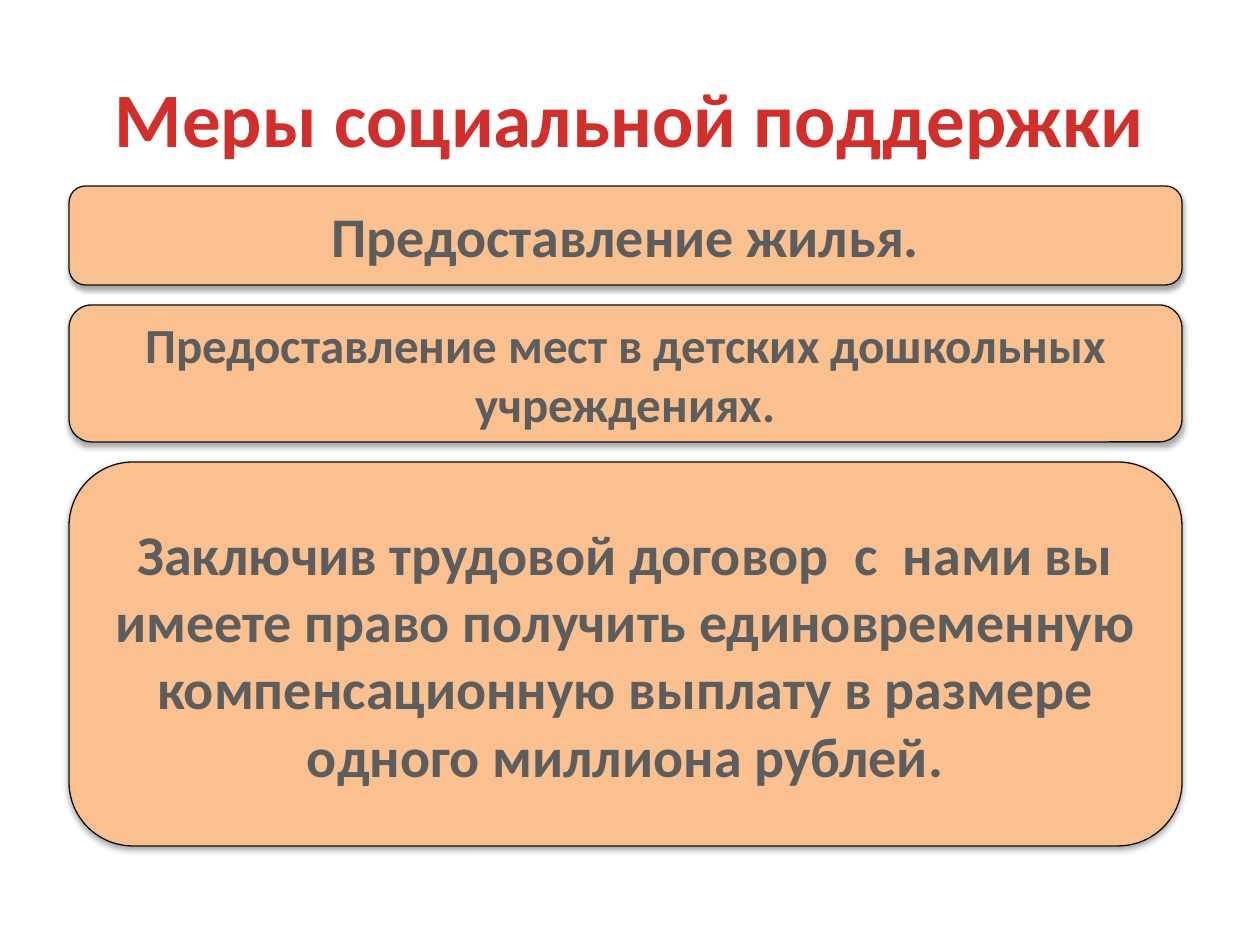
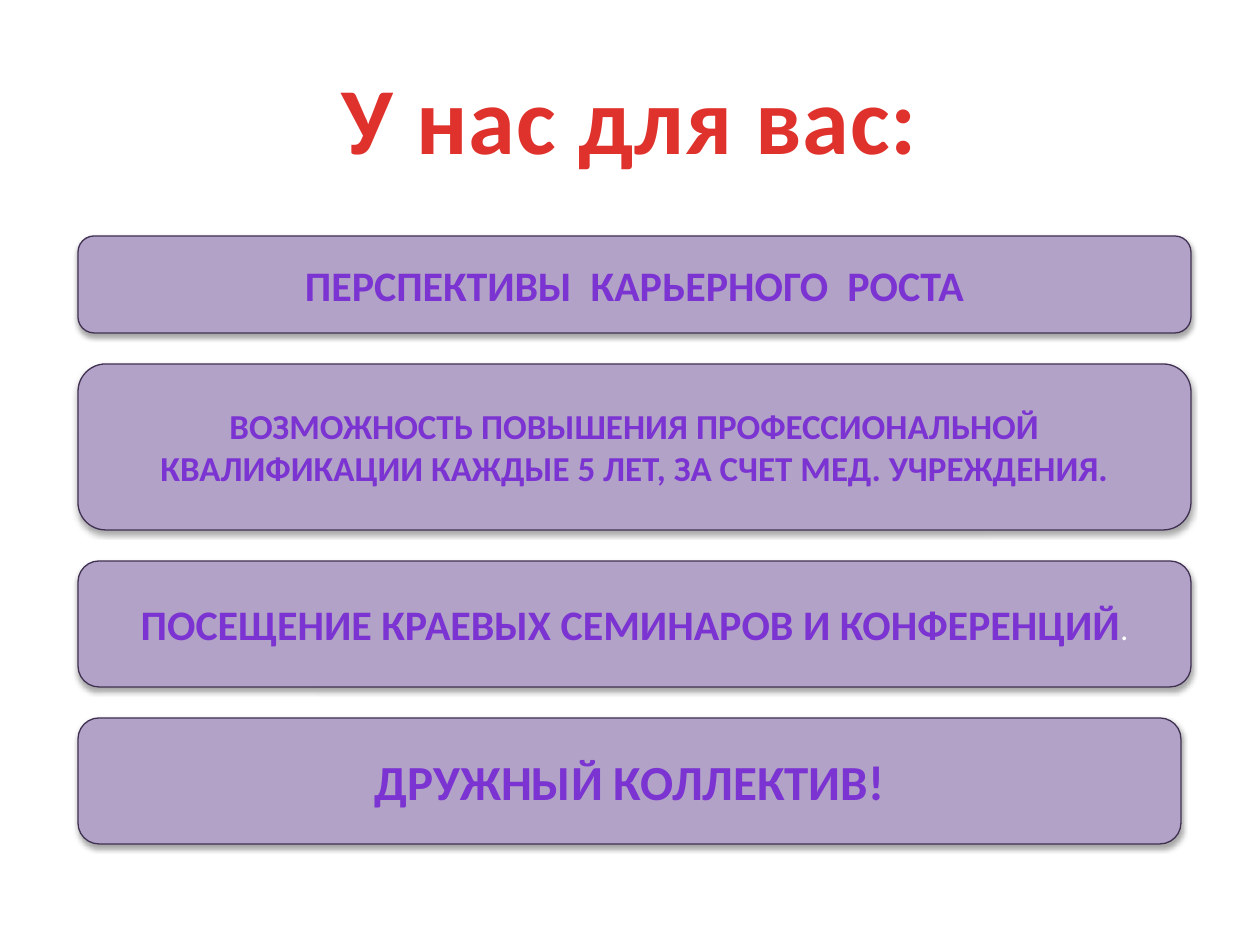
"""Build two slides on social support measures and benefits for medical staff."""
from dataclasses import dataclass
from typing import Any

import lxml.etree
import pptx
import pptx.dml.color
import pptx.enum.shapes
import pptx.enum.text
import pptx.oxml.ns
import pptx.util

RGBColor = pptx.dml.color.RGBColor

EMU_PER_PX = 914400 / 126
SLIDE_WIDTH, SLIDE_HEIGHT = 1260, 945
TITLE_FRAME = (63, 38, 1134, 158)
PANEL_WIDTH = 1113
FONT_NAME = "Calibri"

WHITE = RGBColor(0xFF, 0xFF, 0xFF)
BLACK = RGBColor(0x00, 0x00, 0x00)
CRIMSON = RGBColor(0xD0, 0x2F, 0x2C)
SCARLET = RGBColor(0xE0, 0x32, 0x2D)
APRICOT = RGBColor(0xFA, 0xC0, 0x90)
NEAR_BLACK = RGBColor(0x0D, 0x0D, 0x0D)
GREY = RGBColor(0x5D, 0x5D, 0x5D)
LILAC = RGBColor(0xB3, 0xA2, 0xC7)
DARK_PURPLE = RGBColor(0x40, 0x31, 0x52)
VIOLET = RGBColor(0x7B, 0x34, 0xD2)


@dataclass(frozen=True)
class Words:
    text: str
    size: int
    color: RGBColor
    bold: bool = True
    spacing: int = 0


@dataclass(frozen=True)
class Panel:
    height: int
    words: tuple[Words, ...]
    width: int = PANEL_WIDTH


@dataclass(frozen=True)
class Topic:
    title: Words
    left: int
    top: int
    gap: int
    fill: RGBColor
    outline: RGBColor
    panels: tuple[Panel, ...]


SUPPORT = Topic(
    Words("Меры социальной поддержки", 44, CRIMSON),
    left=69, top=186, gap=20, fill=APRICOT, outline=NEAR_BLACK,
    panels=(
        Panel(99, (Words("Предоставление жилья.", 32, GREY),)),
        Panel(137, (Words("Предоставление мест в детских дошкольных учреждениях.", 28, GREY),)),
        Panel(384, (Words(
            "Заключив трудовой договор  с  нами вы имеете право получить "
            "единовременную компенсационную выплату в размере одного миллиона рублей.",
            32, GREY),)),
    ),
)

BENEFITS = Topic(
    Words("У нас для вас:", 54, SCARLET, spacing=50),
    left=78, top=236, gap=31, fill=LILAC, outline=DARK_PURPLE,
    panels=(
        Panel(97, (Words("ПЕРСПЕКТИВЫ  КАРЬЕРНОГО  РОСТА", 24, VIOLET),)),
        Panel(166, (Words(
            "ВОЗМОЖНОСТЬ ПОВЫШЕНИЯ ПРОФЕССИОНАЛЬНОЙ КВАЛИФИКАЦИИ "
            "КАЖДЫЕ 5 ЛЕТ, ЗА СЧЕТ МЕД. УЧРЕЖДЕНИЯ.", 20, VIOLET),)),
        Panel(126, (
            Words("ПОСЕЩЕНИЕ КРАЕВЫХ СЕМИНАРОВ И КОНФЕРЕНЦИЙ", 24, VIOLET),
            Words(".", 18, WHITE, bold=False),
        )),
        Panel(126, (Words("ДРУЖНЫЙ КОЛЛЕКТИВ!", 28, VIOLET),), width=1103),
    ),
)


def px(length: int) -> pptx.util.Emu:
    """Turn pixels into EMU."""
    return pptx.util.Emu(round(length * EMU_PER_PX))


def write(shape: Any, words: tuple[Words, ...]) -> None:
    """Write centred words into a shape."""
    frame = shape.text_frame
    frame.word_wrap = True
    frame.vertical_anchor = pptx.enum.text.MSO_ANCHOR.MIDDLE
    paragraph = frame.paragraphs[0]
    paragraph.alignment = pptx.enum.text.PP_ALIGN.CENTER
    for part in words:
        run = paragraph.add_run()
        run.text = part.text
        formats = {"name": FONT_NAME, "size": pptx.util.Pt(part.size), "bold": part.bold}
        for attribute, value in formats.items():
            setattr(run.font, attribute, value)
        run.font.color.rgb = part.color
        if part.spacing:
            run._r.get_or_add_rPr().set("spc", str(part.spacing))


def cast_shadow(shape: Any) -> None:
    """Give a shape a soft shadow straight below it."""
    qn = pptx.oxml.ns.qn
    shape.shadow.inherit = False
    effects = shape._element.spPr.find(qn("a:effectLst"))
    shadow = lxml.etree.SubElement(
        effects, qn("a:outerShdw"), blurRad="40000", dist="23000", dir="5400000", rotWithShape="0")
    color = lxml.etree.SubElement(shadow, qn("a:srgbClr"), val=str(BLACK))
    lxml.etree.SubElement(color, qn("a:alpha"), val="35000")


def draw_panel(slide: Any, topic: Topic, panel: Panel, top: int) -> None:
    """Draw one rounded panel of a topic."""
    shape = slide.shapes.add_shape(
        pptx.enum.shapes.MSO_SHAPE.ROUNDED_RECTANGLE,
        *map(px, (topic.left, top, panel.width, panel.height)))
    shape.fill.solid()
    shape.fill.fore_color.rgb = topic.fill
    shape.line.color.rgb = topic.outline
    shape.line.width = pptx.util.Pt(0.75)
    cast_shadow(shape)
    write(shape, panel.words)


def draw_topic(deck: Any, topic: Topic) -> None:
    """Add a slide with a title and a stack of panels."""
    slide = deck.slides.add_slide(deck.slide_layouts[6])
    write(slide.shapes.add_textbox(*map(px, TITLE_FRAME)), (topic.title,))
    top = topic.top
    for panel in topic.panels:
        draw_panel(slide, topic, panel, top)
        top += panel.height + topic.gap


def main() -> None:
    """Build and save the deck."""
    deck = pptx.Presentation()
    deck.slide_width, deck.slide_height = px(SLIDE_WIDTH), px(SLIDE_HEIGHT)
    for topic in (SUPPORT, BENEFITS):
        draw_topic(deck, topic)
    deck.save("out.pptx")


if __name__ == "__main__":
    main()
